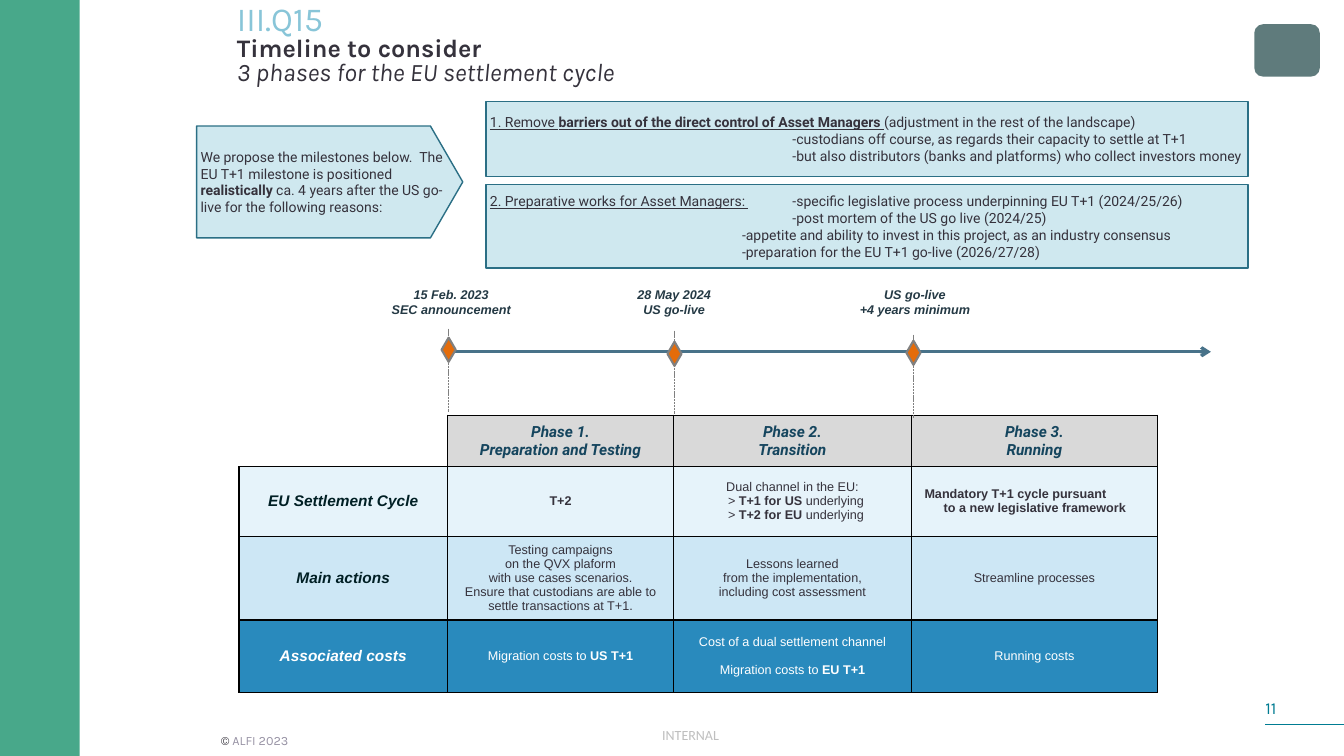
from dataclasses import dataclass

from lxml import etree
from pptx import Presentation
from pptx.dml.color import RGBColor
from pptx.enum.dml import MSO_LINE
from pptx.enum.shapes import MSO_CONNECTOR, MSO_SHAPE
from pptx.enum.text import MSO_ANCHOR, MSO_AUTO_SIZE, PP_ALIGN
from pptx.oxml.ns import qn
from pptx.util import Inches, Pt

LEFT, CENTER = PP_ALIGN.LEFT, PP_ALIGN.CENTER
TOP, MIDDLE, BOTTOM = MSO_ANCHOR.TOP, MSO_ANCHOR.MIDDLE, MSO_ANCHOR.BOTTOM
STRAIGHT, DASH = MSO_CONNECTOR.STRAIGHT, MSO_LINE.SQUARE_DOT
RECTANGLE, PENTAGON = MSO_SHAPE.RECTANGLE, MSO_SHAPE.PENTAGON
DIAMOND, ROUNDED = MSO_SHAPE.FLOWCHART_DECISION, MSO_SHAPE.ROUNDED_RECTANGLE
TITLE_ONLY = 5


@dataclass(frozen=True)
class Theme:
    ink: str = "35323C"
    green: str = "48A88A"
    teal: str = "007C92"
    emblem: str = "5F7B7C"
    section: str = "88C5D8"
    muted: str = "9792A4"
    pale_gray: str = "BFBFBF"
    gray: str = "808080"
    box_fill: str = "CFE8EF"
    box_line: str = "2B6F85"
    arrow: str = "487289"
    marker: str = "E46C0A"
    date: str = "243944"
    phase: str = "15455E"
    phase_fill: str = "D9D9D9"
    row_label: str = "001F24"
    row_fills: tuple = ("E6F3FA", "CDE7F5", "298ABD")
    white: str = "FFFFFF"
    black: str = "000000"
    section_size: float = 24
    title_size: float = 18
    number_size: float = 12
    label_size: float = 11
    body_size: float = 10
    small_size: float = 9


THEME = Theme()


def color(value):
    return RGBColor.from_string(value)


def style_span(span, font, size, ink, marks=""):
    """Marks: b bold, i italic, u underlined."""
    span.font.name, span.font.size = font, Pt(size)
    span.font.color.rgb = color(ink)
    span.font.bold, span.font.italic = "b" in marks, "i" in marks
    span.font.underline = "u" in marks


def set_indent(para, margin, first=0.0, tab=None):
    properties = para._p.get_or_add_pPr()
    properties.set("marL", str(Inches(margin)))
    properties.set("indent", str(Inches(first)))
    if tab:
        stops = etree.SubElement(properties, qn("a:tabLst"))
        etree.SubElement(stops, qn("a:tab"), pos=str(Inches(tab)), algn="l")


def write(frame, paras, font, size, ink, marks="", align=LEFT):
    """Each paragraph is a string or a list of (text, marks) spans."""
    for index, spans in enumerate(paras):
        para = frame.paragraphs[0] if index == 0 else frame.add_paragraph()
        para.alignment = align
        if isinstance(spans, str):
            spans = [(spans, marks)]
        para.text = ""
        for text, span_marks in spans:
            for part, piece in enumerate(text.split("\v")):
                if part:
                    para.add_line_break()
                span = para.add_run()
                span.text = piece
                style_span(span, font, size, ink, span_marks)


def set_frame(frame, anchor, side, end, wrap=True):
    frame.word_wrap, frame.vertical_anchor = wrap, anchor
    frame.margin_left = frame.margin_right = Inches(side)
    frame.margin_top = frame.margin_bottom = Inches(end)


def add_text(page, place, paras, *style, anchor=TOP, side=0.0, end=0.05, wrap=True):
    frame = page.shapes.add_textbox(*map(Inches, place)).text_frame
    set_frame(frame, anchor, side, end, wrap)
    write(frame, paras, *style)
    return frame


def add_shape(page, kind, place, fill, line=None, width=1.0):
    shape = page.shapes.add_shape(kind, *map(Inches, place))
    shape.shadow.inherit = False
    shape.fill.solid()
    shape.fill.fore_color.rgb = color(fill)
    if line:
        shape.line.color.rgb, shape.line.width = color(line), Pt(width)
    else:
        shape.line.fill.background()
    return shape


def add_note(page, kind, place, paras):
    shape = add_shape(page, kind, place, THEME.box_fill, THEME.box_line)
    set_frame(shape.text_frame, MIDDLE, 0.04, 0.05)
    write(shape.text_frame, paras, "Roboto", THEME.body_size, THEME.ink)
    return shape


def add_line(page, start, stop, ink, width, dash=None, arrow=False):
    line = page.shapes.add_connector(STRAIGHT, *map(Inches, start + stop))
    line.line.color.rgb, line.line.width = color(ink), Pt(width)
    if dash:
        line.line.dash_style = dash
    if arrow:
        etree.SubElement(line.line._get_or_add_ln(), qn("a:tailEnd"), type="arrow")
    etree.SubElement(line._element.spPr, qn("a:effectLst"))


def set_borders(cell, hidden=()):
    properties = cell._tc.get_or_add_tcPr()
    for position, side in enumerate(("lnL", "lnR", "lnT", "lnB")):
        edge = etree.Element(qn("a:" + side), w=str(Pt(1)))
        if side in hidden:
            etree.SubElement(edge, qn("a:noFill"))
        else:
            fill = etree.SubElement(edge, qn("a:solidFill"))
            etree.SubElement(fill, qn("a:srgbClr"), val=THEME.black)
        properties.insert(position, edge)


def add_title(page):
    title = page.shapes.title
    title.left, title.top, title.width, title.height = map(Inches, (2.35, 0.2, 8.62, 0.66))
    frame = title.text_frame
    set_frame(frame, BOTTOM, 0, 0)
    frame.auto_size = MSO_AUTO_SIZE.NONE
    frame.text = "III.Q15\vTimeline to consider\v3 phases for the EU settlement cycle"
    para = frame.paragraphs[0]
    para.alignment, para.line_spacing = LEFT, 0.8
    section, heading, subtitle = para.runs
    style_span(section, "Karla", THEME.section_size, THEME.section)
    style_span(heading, "Karla", THEME.title_size, THEME.ink, "b")
    style_span(subtitle, "Karla", THEME.title_size, THEME.ink, "i")


def add_frame_parts(page):
    add_shape(page, RECTANGLE, (0, 0, 0.79, 7.5), THEME.green)
    add_shape(page, ROUNDED, (12.44, 0.24, 0.65, 0.52), THEME.emblem)
    add_text(page, (12.55, 6.92, 0.18, 0.2), ["11"], "Karla", THEME.number_size, THEME.teal,
             anchor=MIDDLE, end=0, wrap=False)
    add_line(page, (13.33, 7.19), (12.55, 7.19), THEME.teal, 0.5)
    add_text(page, (6.47, 7.16, 0.77, 0.27), ["INTERNAL"], "Calibri", THEME.body_size,
             THEME.pale_gray, side=0.1, wrap=False)
    rights = add_text(page, (2.19, 7.21, 3.05, 0.27), [[("© ", ""), ("ALFI 2023", "")]],
                      "Karla", THEME.small_size, THEME.muted, anchor=MIDDLE)
    rights.paragraphs[0].runs[0].font.color.rgb = color(THEME.ink)


def add_reasons(page):
    intro = add_note(page, PENTAGON, (1.95, 1.25, 2.64, 1.11), [[
        ("We propose the milestones below.  The EU T+1 milestone is positioned ", ""),
        ("realistically", "b"),
        (" ca. 4 years after the US go-live for the following reasons:", "")]])
    intro.adjustments[0] = 0.289
    intro.text_frame.margin_right = Inches(0.02)
    barriers = add_note(page, RECTANGLE, (4.82, 1.01, 7.56, 0.74), [
        [("1. Remove ", "u"), ("barriers out of the direct control of Asset Managers ", "bu"),
         ("(adjustment in the rest of the landscape)", "")],
        "-custodians off course, as regards their capacity to settle at T+1",
        "-but also distributors (banks and platforms) who collect investors money"])
    works = add_note(page, RECTANGLE, (4.82, 1.83, 7.56, 0.83), [
        [("2. Preparative works for Asset Managers: ", "u"),
         ("\t-specific legislative process underpinning EU T+1 (2024/25/26)", "")],
        "-post mortem of the US go live (2024/25)",
        "-appetite and ability to invest in this project, as an industry consensus",
        "-preparation for the EU T+1 go-live (2026/27/28)"])
    set_indent(works.text_frame.paragraphs[0], 0, tab=3)
    for box, margins in ((barriers, (3, 3)), (works, (3, 2.5, 2.5))):
        for para, margin in zip(box.text_frame.paragraphs[1:], margins):
            set_indent(para, margin)


def add_timeline(page):
    add_line(page, (4.45, 3.49), (12.01, 3.49), THEME.arrow, 2.25, arrow=True)
    milestones = (
        (4.45, 3.26, 3.35, (3.87, 1.21), ["15 Feb. 2023", "SEC announcement"]),
        (6.69, 3.28, 3.39, (6.24, 0.89), ["28 May 2024", "US go-live"]),
        (9.06, 3.32, 3.38, (8.51, 1.13), ["US go-live", "+4 years minimum"]))
    for x, top, marker_top, (left, width), label in milestones:
        add_line(page, (x, top), (x, top + 0.83), THEME.gray, 0.5, DASH)
        add_shape(page, DIAMOND, (x - 0.07, marker_top, 0.14, 0.24), THEME.marker, THEME.gray, 1.5)
        add_text(page, (left, 2.8, width, 0.4), label, "Arial", THEME.small_size,
                 THEME.date, "bi", CENTER)


def add_phases(page):
    rows = (
        ([], ["Phase 1.", "Preparation and Testing"], ["Phase 2.", "Transition"],
         ["Phase 3.", "Running"]),
        (["EU Settlement Cycle"], [[("T+2", "b")]],
         ["Dual channel in the EU:",
          [("> ", ""), ("T+1 for US ", "b"), ("underlying", "")],
          [("> ", ""), ("T+2 for EU ", "b"), ("underlying", "")]],
         [[("Mandatory T+1 cycle pursuant\vto a new legislative framework", "b")]]),
        (["Main actions"],
         ["Testing campaigns", "on the QVX plaform", "with use cases scenarios.",
          "Ensure that custodians are able to settle transactions at T+1."],
         ["Lessons learned", "from the implementation,", "including cost assessment"],
         ["Streamline processes"]),
        (["Associated costs"], [[("Migration costs to ", ""), ("US T+1", "b")]],
         ["Cost of a dual settlement channel", [("Migration costs to ", ""), ("EU T+1", "b")]],
         ["Running costs"]))
    place = map(Inches, (2.37, 4.12, 9.11, 2.74))
    table = page.shapes.add_table(4, 4, *place).table
    table.first_row = table.horz_banding = False
    for column, width in zip(table.columns, (2.07, 2.24, 2.36, 2.44)):
        column.width = Inches(width)
    for row, height in zip(table.rows, (0.51, 0.69, 0.82, 0.72)):
        row.height = Inches(height)

    fills = (THEME.phase_fill,) + THEME.row_fills
    for r, cells in enumerate(rows):
        for c, paras in enumerate(cells):
            cell = table.cell(r, c)
            cell.vertical_anchor = MIDDLE
            cell.margin_left = cell.margin_right = Inches(0.08 if r else 0.04)
            cell.margin_top = cell.margin_bottom = Inches(0.04 if r else 0.06)
            if paras:
                cell.fill.solid()
                cell.fill.fore_color.rgb = color(fills[r])
            else:
                cell.fill.background()
            set_borders(cell, () if paras else ("lnL", "lnT"))
            if r == 0:
                style = ("Roboto", THEME.label_size, THEME.phase, "bi")
            elif c == 0:
                style = ("Arial", THEME.label_size, THEME.white if r == 3 else THEME.row_label, "bi")
            else:
                style = ("Arial", THEME.small_size, THEME.white if r == 3 else THEME.ink, "")
            write(cell.text_frame, paras, *style, CENTER)

    # Cells with their own indents and spacing
    for para in table.cell(1, 2).text_frame.paragraphs[1:]:
        set_indent(para, 0.07)
    mandate = table.cell(1, 3).text_frame.paragraphs[0]
    mandate.alignment = LEFT
    set_indent(mandate, 0.24, -0.19)
    table.cell(3, 2).text_frame.paragraphs[1].space_before = Pt(10)


def main():
    deck = Presentation()
    deck.slide_width, deck.slide_height = Inches(13.33), Inches(7.5)
    page = deck.slides.add_slide(deck.slide_layouts[TITLE_ONLY])
    add_frame_parts(page)
    add_title(page)
    add_phases(page)
    add_timeline(page)
    add_reasons(page)
    deck.save("out.pptx")


if __name__ == "__main__":
    main()
